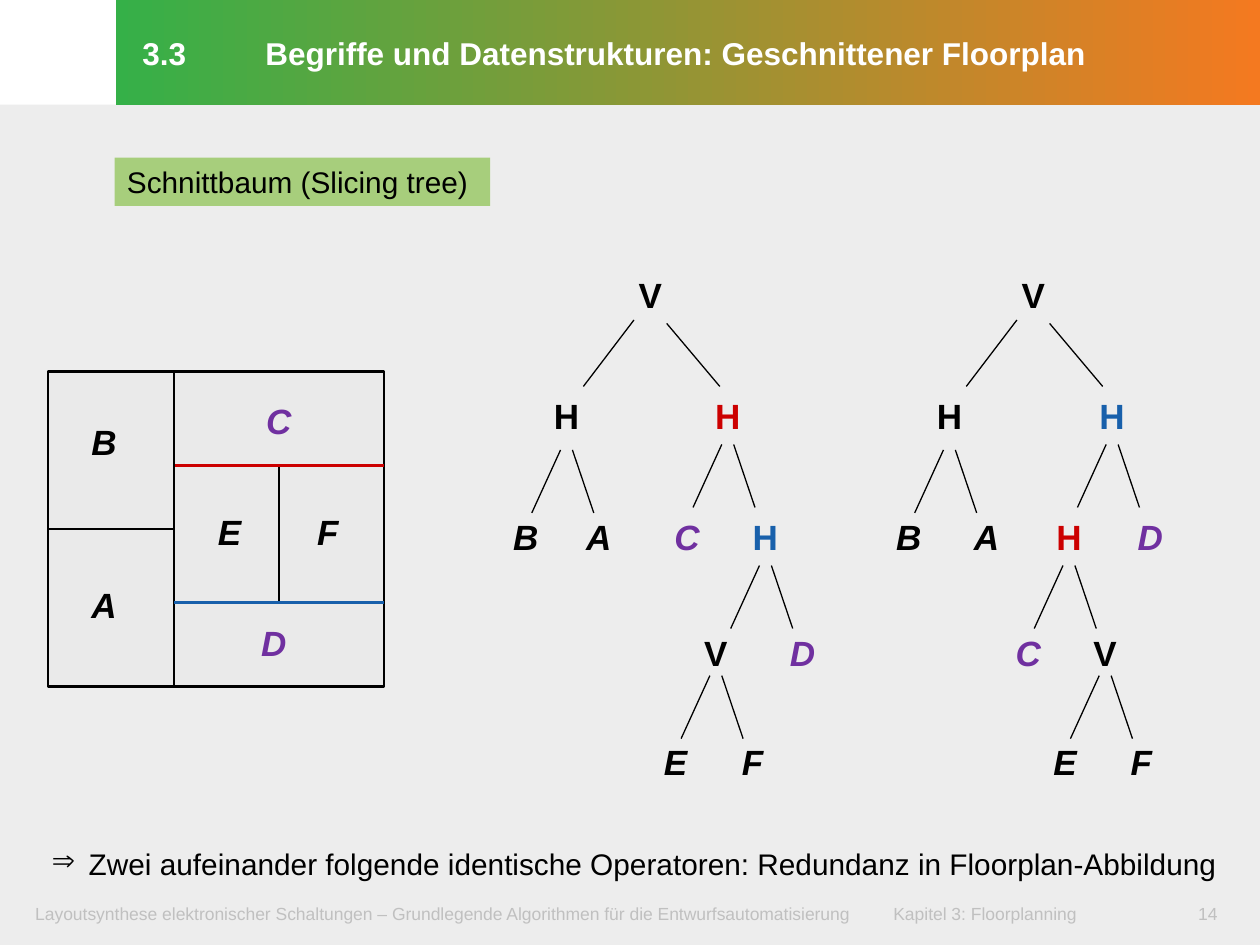
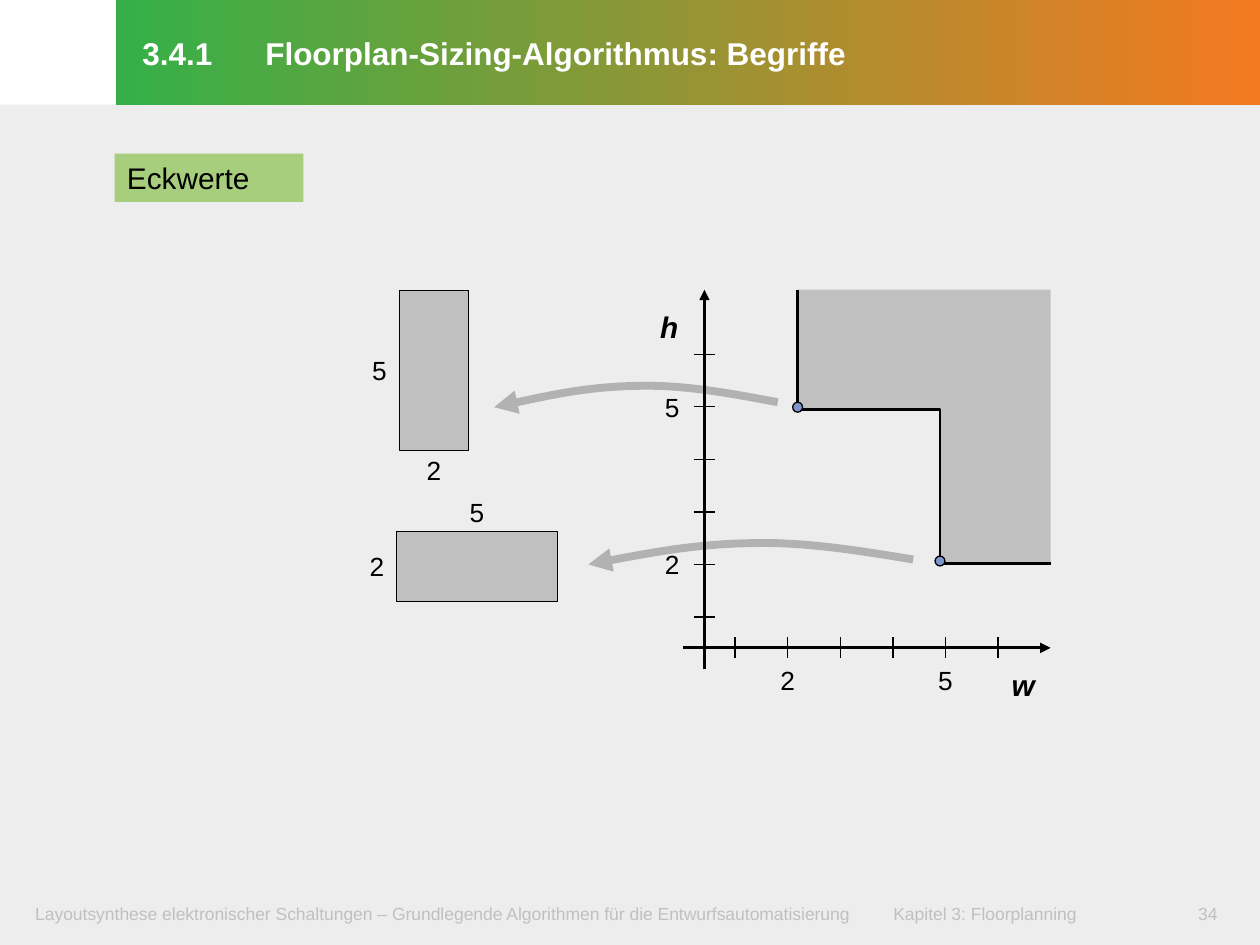
from lxml.etree import SubElement
from pptx import Presentation
from pptx.dml.color import RGBColor
from pptx.enum.shapes import MSO_CONNECTOR, MSO_SHAPE
from pptx.enum.text import MSO_ANCHOR, PP_ALIGN
from pptx.oxml.ns import qn
from pptx.util import Cm, Pt

FONT = "Arial"
BLACK = RGBColor(0x00, 0x00, 0x00)
WHITE = RGBColor(0xFF, 0xFF, 0xFF)
BACKGROUND = RGBColor(0xED, 0xED, 0xED)
FOOTER_GREY = RGBColor(0xC0, 0xC0, 0xC0)
BAND_GREEN = RGBColor(0x35, 0xB0, 0x48)
BAND_ORANGE = RGBColor(0xF4, 0x79, 0x20)
TAG_GREEN = RGBColor(0xA7, 0xCE, 0x7C)
PLAN_GREY = RGBColor(0xEA, 0xEA, 0xEA)
AREA_GREY = RGBColor(0xC0, 0xC0, 0xC0)
ARROW_GREY = RGBColor(0xB2, 0xB2, 0xB2)
POINT_BLUE = RGBColor(0x7D, 0x95, 0xCA)
RED = RGBColor(0xCC, 0x00, 0x00)
BLUE = RGBColor(0x18, 0x60, 0xAB)
PURPLE = RGBColor(0x70, 0x30, 0xA0)

FOOTER = ("Layoutsynthese elektronischer Schaltungen – Grundlegende Algorithmen "
          "für die Entwurfsautomatisierung\tKapitel 3: Floorplanning")

LEVELS = (0, 2.44, 4.88, 7.22, 9.42)
ROOT_FORK = ((-0.33, 0.51, -1.35, 1.85), (0.33, 0.58, 1.4, 1.85))
NODE_FORK = ((-0.12, 0, -0.7, 1.27), (0.12, 0, 0.55, 1.27))
UPPER_GAP, MIDDLE_GAP, LOWER_GAP = 0.69, 0.58, 0.46

RED_CUT_FIRST = (
    ("H", -1.69, 1, BLACK, UPPER_GAP), ("H", 1.56, 1, RED, MIDDLE_GAP),
    ("B", -2.51, 2, BLACK, None), ("A", -1.04, 2, BLACK, None),
    ("C", 0.74, 2, PURPLE, None), ("H", 2.32, 2, BLUE, MIDDLE_GAP),
    ("V", 1.32, 3, BLACK, LOWER_GAP), ("D", 3.07, 3, PURPLE, None),
    ("E", 0.51, 4, BLACK, None), ("F", 2.06, 4, BLACK, None),
)
BLUE_CUT_FIRST = (
    ("H", -1.69, 1, BLACK, UPPER_GAP), ("H", 1.59, 1, BLUE, MIDDLE_GAP),
    ("B", -2.51, 2, BLACK, None), ("A", -0.94, 2, BLACK, None),
    ("H", 0.72, 2, RED, MIDDLE_GAP), ("D", 2.36, 2, PURPLE, None),
    ("C", -0.1, 3, PURPLE, None), ("V", 1.45, 3, BLACK, LOWER_GAP),
    ("E", 0.64, 4, BLACK, None), ("F", 2.18, 4, BLACK, None),
)
PLAN_LABELS = (
    ("B", 1.13, 1.42, BLACK), ("A", 1.13, 4.7, BLACK), ("C", 4.65, 0.99, PURPLE),
    ("E", 3.66, 3.23, BLACK), ("F", 5.64, 3.23, BLACK), ("D", 4.55, 5.46, PURPLE),
)

AXIS_OVERHANG = 0.43
TICK_START, TICK_STEP, TICK_COUNT = 0.62, 1.06, 6
CURVE = ((0, 0.46), (1 / 6, 0.25), (1 / 3, 0.05), (1 / 2, 0.03),
         (2 / 3, 0), (5 / 6, 0.18), (1, 0.36))


def style(shape, fill=None, line=None, width=0.75):
    """Give a shape its fill and outline, and no shadow."""
    shape.shadow.inherit = False
    if fill is None:
        shape.fill.background()
    else:
        shape.fill.solid()
        shape.fill.fore_color.rgb = fill
    if line is None:
        shape.line.fill.background()
    else:
        shape.line.color.rgb = line
        shape.line.width = Pt(width)


def add_box(slide, box, fill=None, line=None, width=0.75, kind=MSO_SHAPE.RECTANGLE):
    """Add a preset shape in a box of centimetres."""
    shape = slide.shapes.add_shape(kind, *map(Cm, box))
    style(shape, fill, line, width)
    return shape


def add_line(slide, start, end, color=BLACK, width=0.75, arrow=False):
    """Add a straight line, with an arrowhead at its end if asked."""
    connector = slide.shapes.add_connector(MSO_CONNECTOR.STRAIGHT, *map(Cm, (*start, *end)))
    connector.line.color.rgb = color
    connector.line.width = Pt(width)
    if arrow:
        add_arrowhead(connector, "a:tailEnd")
    SubElement(connector.element.spPr, qn("a:effectLst"))


def add_arrowhead(shape, tag):
    """Put a triangle on one end of a line."""
    SubElement(shape.element.spPr.find(qn("a:ln")), qn(tag), type="triangle")


def add_outline(slide, points, closed=False):
    """Add a freeform through points given in centimetres."""
    points = [(Cm(x), Cm(y)) for x, y in points]
    builder = slide.shapes.build_freeform(*points[0])
    builder.add_line_segments(points[1:], close=closed)
    return builder.convert_to_shape()


def set_text(shape, text, size, color=BLACK, bold=False, italic=False,
             align=PP_ALIGN.LEFT, insets=(0, 0, 0, 0), tab=None, wrap=True):
    """Write one paragraph into a shape."""
    frame = shape.text_frame
    frame.word_wrap = wrap
    frame.vertical_anchor = MSO_ANCHOR.MIDDLE
    frame.margin_left, frame.margin_top, frame.margin_right, frame.margin_bottom = map(Cm, insets)
    paragraph = frame.paragraphs[0]
    paragraph.text = text
    paragraph.alignment = align
    if tab is not None:
        tabs = SubElement(paragraph._p.get_or_add_pPr(), qn("a:tabLst"))
        SubElement(tabs, qn("a:tab"), pos=str(Cm(tab)), algn="l")
    font = paragraph.font
    font.name, font.size, font.bold, font.italic = FONT, Pt(size), bold, italic
    font.color.rgb = color
    return paragraph


def add_text(slide, box, text, size, **options):
    """Add a text box in a box of centimetres."""
    return set_text(slide.shapes.add_textbox(*map(Cm, box)), text, size, **options)


def add_label(slide, x, y, text, size=15, **options):
    """Centre a short label on a point."""
    add_text(slide, (x - 0.55, y - 0.55, 1.1, 1.1), text, size, align=PP_ALIGN.CENTER, **options)


def add_node(slide, x, y, text, color):
    """Label a cut upright and a block in italics."""
    add_label(slide, x, y, text, 20, color=color, bold=True, italic=text not in "HV")


def add_frame(presentation, number, title, page, tag, tag_box):
    """Add a slide with background, title band, footer and topic tag."""
    slide = presentation.slides.add_slide(presentation.slide_layouts[6])
    add_box(slide, (0, 2.11, 25.4, 16.94), BACKGROUND)
    footer = {"color": FOOTER_GREY, "insets": (0.3, 0.15, 0.3, 0.15)}
    add_text(slide, (0.41, 18.01, 23.09, 0.81), FOOTER, 10, tab=17.3, **footer)
    add_text(slide, (23.6, 18.01, 1.5, 0.81), page, 10, align=PP_ALIGN.CENTER, **footer)

    band = add_box(slide, (2.34, 0, 23.06, 2.11))
    band.fill.gradient()
    band.fill.gradient_angle = 0
    for stop, color, position in zip(band.fill.gradient_stops, (BAND_GREEN, BAND_ORANGE), (0, 1)):
        stop.color.rgb = color
        stop.position = position
    heading = set_text(band, f"{number}\t{title}", 18, WHITE, bold=True,
                       insets=(0.53, 0.13, 0.25, 0.18), tab=2.48)
    heading.line_spacing = Pt(23.5)

    set_text(add_box(slide, tag_box, TAG_GREEN), tag, 17, insets=(0.25, 0.13, 0.25, 0.13))
    return slide


def add_floorplan(slide, box):
    """Draw the sliced floorplan with its cut lines and blocks."""
    left, top, width, height = box
    split, right, bottom = left + 2.54, left + width, top + height
    middle, red_cut, blue_cut = left + 4.65, top + 1.9, top + 4.65
    add_box(slide, box, PLAN_GREY, ARROW_GREY)
    add_box(slide, (split, top, right - split, height), line=BLACK, width=1.25)
    add_line(slide, (middle, red_cut), (middle, blue_cut), width=1.25)
    add_line(slide, (split, red_cut), (right, red_cut), RED, 1.5)
    add_box(slide, (left, top, split - left, height), line=BLACK, width=1.5)
    add_line(slide, (left, top + height / 2), (split, top + height / 2), width=1.5)
    add_line(slide, (split, blue_cut), (right, blue_cut), BLUE, 1.5)
    for text, x, y, color in PLAN_LABELS:
        add_node(slide, left + x, top + y, text, color)


def add_fork(slide, x, y, fork):
    """Draw the two branches below a tree node."""
    for start_x, start_y, end_x, end_y in fork:
        add_line(slide, (x + start_x, y + start_y), (x + end_x, y + end_y))


def add_tree(slide, root_x, root_y, nodes):
    """Draw a slicing tree below its root."""
    add_node(slide, root_x, root_y, "V", BLACK)
    add_fork(slide, root_x, root_y, ROOT_FORK)
    for text, offset, level, color, gap in nodes:
        x, y = root_x + offset, root_y + LEVELS[level]
        add_node(slide, x, y, text, color)
        if gap is not None:
            add_fork(slide, x, y + gap, NODE_FORK)


def add_conclusion(slide, box, text):
    """Add the closing statement with an arrow bullet."""
    shape = slide.shapes.add_textbox(*map(Cm, box))
    properties = shape.text_frame.paragraphs[0]._p.get_or_add_pPr()
    properties.set("marL", str(Cm(0.75)))
    properties.set("indent", str(-Cm(0.75)))
    SubElement(properties, qn("a:buChar"), char="⇒")
    set_text(shape, text, 17, insets=(0.53, 0.13, 0.25, 0.18), wrap=False)


def add_block(slide, box, width_text, height_text, width_above):
    """Draw a block with its width and height."""
    left, top, width, height = box
    add_box(slide, box, AREA_GREY, BLACK, 0.5)
    width_y = top - 0.4 if width_above else top + height + 0.4
    add_label(slide, left + width / 2, width_y, width_text)
    add_label(slide, left - 0.4, top + height / 2, height_text)


def add_curved_arrow(slide, left, top, width):
    """Draw a bent arrow that points to the left."""
    shape = add_outline(slide, [(left + x * width, top + y) for x, y in CURVE])
    style(shape, line=ARROW_GREY, width=4.5)
    add_arrowhead(shape, "a:headEnd")
    segments = list(shape.element.iter(qn("a:lnTo")))
    outline = segments[0].getparent()
    for first in range(0, len(segments), 3):
        curve = SubElement(outline, qn("a:cubicBezTo"))
        for segment in segments[first:first + 3]:
            curve.append(segment[0])
            outline.remove(segment)


def add_shape_function(slide, box):
    """Draw the shape function with its area, corner points and axes."""
    left, top, width, height = box
    right, bottom = left + width, top + height
    origin_x, origin_y = left + AXIS_OVERHANG, bottom - AXIS_OVERHANG
    narrow, wide = origin_x + 1.88, origin_x + 4.75
    tall, flat = origin_y - 4.8, origin_y - 1.7
    steps = [(narrow, top), (narrow, tall), (wide, tall), (wide, flat), (right, flat)]

    style(add_outline(slide, steps + [(right, top)], closed=True), AREA_GREY)
    style(add_outline(slide, steps), line=BLACK, width=1.63)
    for x, y in ((narrow, tall), (wide, flat)):
        add_box(slide, (x - 0.1, y - 0.15, 0.2, 0.2), POINT_BLUE, BLACK, kind=MSO_SHAPE.OVAL)
    add_curved_arrow(slide, narrow - 6.12, tall - 0.51, 5.72)
    add_curved_arrow(slide, wide - 7.09, flat - 0.44, 6.55)

    add_line(slide, (origin_x, bottom), (origin_x, top), width=1.63, arrow=True)
    add_line(slide, (left, origin_y), (right, origin_y), width=1.63, arrow=True)
    for index in range(TICK_COUNT):
        distance = TICK_START + index * TICK_STEP
        x, y = origin_x + distance, origin_y - distance
        add_line(slide, (x, origin_y - 0.21), (x, origin_y + 0.21))
        add_line(slide, (origin_x - 0.21, y), (origin_x + 0.21, y))
        if index + 1 in (2, 5):
            add_label(slide, x, origin_y + 0.65, str(index + 1))
            add_label(slide, origin_x - 0.65, y, str(index + 1))
    add_label(slide, origin_x + 6.43, origin_y + 0.74, "w", 17, bold=True, italic=True)
    add_label(slide, origin_x - 0.71, origin_y - 6.48, "h", 17, bold=True, italic=True)


def main():
    """Build both slides and save them."""
    presentation = Presentation()
    presentation.slide_width, presentation.slide_height = Cm(25.4), Cm(19.05)

    slide = add_frame(presentation, "3.3", "Begriffe und Datenstrukturen: Geschnittener Floorplan",
                      "14", "Schnittbaum (Slicing tree)", (2.31, 3.18, 7.57, 0.97))
    add_floorplan(slide, (0.97, 7.49, 6.78, 6.35))
    add_tree(slide, 13.11, 5.94, RED_CUT_FIRST)
    add_tree(slide, 20.83, 5.94, BLUE_CUT_FIRST)
    add_conclusion(slide, (0.51, 16.92, 24.49, 1.04),
                   "Zwei aufeinander folgende identische Operatoren: Redundanz in Floorplan-Abbildung")

    slide = add_frame(presentation, "3.4.1", "Floorplan-Sizing-Algorithmus: Begriffe",
                      "34", "Eckwerte", (2.31, 3.1, 3.81, 0.97))
    add_block(slide, (8.05, 5.85, 1.4, 3.23), "2", "5", width_above=False)
    add_block(slide, (8, 10.72, 3.23, 1.4), "5", "2", width_above=True)
    add_shape_function(slide, (13.77, 5.84, 7.41, 7.65))

    presentation.save("out.pptx")


if __name__ == "__main__":
    main()
